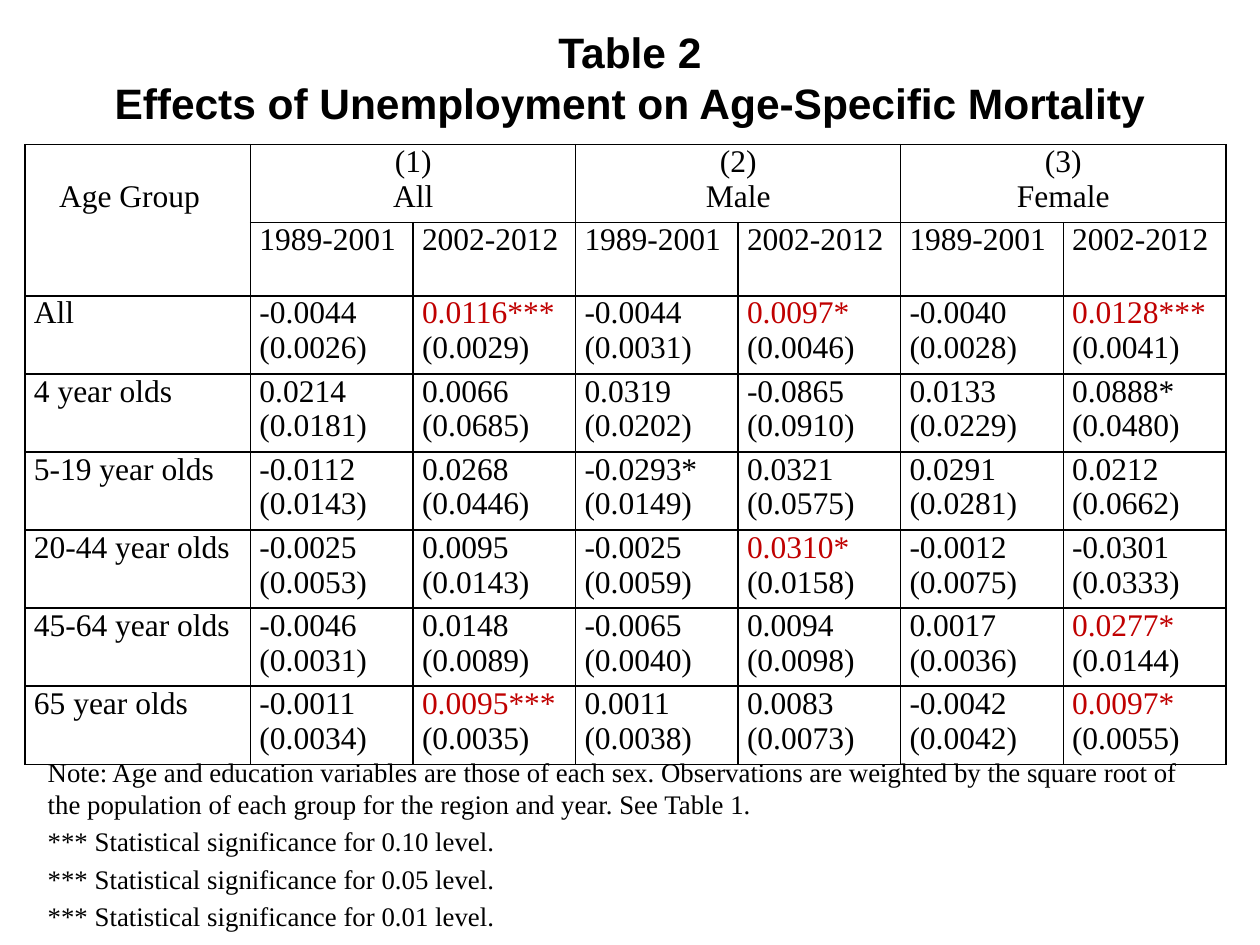
from dataclasses import dataclass

from lxml import etree
from pptx import Presentation
from pptx.dml.color import RGBColor
from pptx.enum.text import MSO_ANCHOR, PP_ALIGN
from pptx.oxml.ns import qn
from pptx.util import Inches, Pt

CENTER, LEFT, JUSTIFY = PP_ALIGN.CENTER, PP_ALIGN.LEFT, PP_ALIGN.JUSTIFY
TOP = MSO_ANCHOR.TOP
SLIDE_WIDTH, SLIDE_HEIGHT = 10, 7.5


@dataclass(frozen=True)
class Theme:
    ink: str = "000000"
    highlight: str = "C00000"
    title_font: str = "Arial"
    body_font: str = "Times New Roman"
    title_size: float = 24.3
    table_size: float = 18
    note_size: float = 15.3
    border_width: float = 1


@dataclass(frozen=True)
class Area:
    """A rectangle given as shares of the slide's width and height."""
    left: float
    top: float
    width: float
    height: float

    def lengths(self):
        return (Inches(self.left * SLIDE_WIDTH), Inches(self.top * SLIDE_HEIGHT),
                Inches(self.width * SLIDE_WIDTH), Inches(self.height * SLIDE_HEIGHT))


@dataclass(frozen=True)
class AgeRow:
    label: str
    estimates: str
    errors: str
    highlighted: tuple = ()


THEME = Theme()
TITLE_AREA = Area(0.051, 0.028, 0.898, 0.11)
NOTE_AREA = Area(0.028, 0.793, 0.929, 0.168)
TABLE_AREA = Area(0.02, 0.153, 0.953, 0.652)
LABEL_COLUMN, VALUE_COLUMN = 0.179, 0.129
ROW_HEIGHT, PERIOD_ROW_HEIGHT = 0.62, 0.55
CELL_MARGIN, TABLE_LINE = 0.07, 0.28

TITLE = ["Table 2", "Effects of Unemployment on Age-Specific Mortality"]
NOTES = ["Note: Age and education variables are those of each sex. Observations are weighted "
         "by the square root of the population of each group for the region and year. See Table 1."]
NOTES += [f"*** Statistical significance for {level} level." for level in ("0.10", "0.05", "0.01")]
GROUPS = ["All", "Male", "Female"]
PERIODS = ["1989-2001", "2002-2012"]
AGE_ROWS = [
    AgeRow("All", "-0.0044 0.0116*** -0.0044 0.0097* -0.0040 0.0128***",
           "0.0026 0.0029 0.0031 0.0046 0.0028 0.0041", (2, 4, 6)),
    AgeRow("4 year olds", "0.0214 0.0066 0.0319 -0.0865 0.0133 0.0888*",
           "0.0181 0.0685 0.0202 0.0910 0.0229 0.0480"),
    AgeRow("5-19 year olds", "-0.0112 0.0268 -0.0293* 0.0321 0.0291 0.0212",
           "0.0143 0.0446 0.0149 0.0575 0.0281 0.0662"),
    AgeRow("20-44 year olds", "-0.0025 0.0095 -0.0025 0.0310* -0.0012 -0.0301",
           "0.0053 0.0143 0.0059 0.0158 0.0075 0.0333", (4,)),
    AgeRow("45-64 year olds", "-0.0046 0.0148 -0.0065 0.0094 0.0017 0.0277*",
           "0.0031 0.0089 0.0040 0.0098 0.0036 0.0144", (6,)),
    AgeRow("65 year olds", "-0.0011 0.0095*** 0.0011 0.0083 -0.0042 0.0097*",
           "0.0034 0.0035 0.0038 0.0073 0.0042 0.0055", (2, 6)),
]


def write(frame, lines, *, size=THEME.table_size, font=THEME.body_font, bold=False,
          align=JUSTIFY, first_color=THEME.ink, line_spacing=None, space_before=0):
    """Write one paragraph per line; first_color applies to the first line only."""
    for index, line in enumerate(lines):
        paragraph = frame.paragraphs[0] if index == 0 else frame.add_paragraph()
        paragraph.alignment = align
        paragraph.space_before = Pt(space_before)
        if line_spacing:
            paragraph.line_spacing = Pt(line_spacing)
        run = paragraph.add_run()
        run.text = line
        run.font.name, run.font.size, run.font.bold = font, Pt(size), bold
        run.font.color.rgb = RGBColor.from_string(THEME.ink if index else first_color)


def add_text(slide, area: Area, lines, *, margins=(0.1, 0.05), **text_format):
    frame = slide.shapes.add_textbox(*area.lengths()).text_frame
    frame.word_wrap = True
    frame.vertical_anchor = TOP
    frame.margin_left = frame.margin_right = Inches(margins[0])
    frame.margin_top = frame.margin_bottom = Inches(margins[1])
    write(frame, lines, **text_format)


def style_cell(cell):
    """Clear the fill, set the margins and draw all four borders."""
    cell.fill.background()
    cell.vertical_anchor = TOP
    cell.margin_left = cell.margin_right = Inches(CELL_MARGIN)
    cell.margin_top = cell.margin_bottom = 0
    properties = cell._tc.get_or_add_tcPr()
    for index, side in enumerate(("lnL", "lnR", "lnT", "lnB")):
        border = etree.Element(qn(f"a:{side}"), w=str(Pt(THEME.border_width)))
        fill = etree.SubElement(border, qn("a:solidFill"))
        etree.SubElement(fill, qn("a:srgbClr"), val=THEME.ink)
        properties.insert(index, border)


def add_mortality_table(slide):
    column_count = 1 + len(GROUPS) * len(PERIODS)
    row_count = 2 + len(AGE_ROWS)
    table = slide.shapes.add_table(row_count, column_count, *TABLE_AREA.lengths()).table
    table.first_row = table.horz_banding = False
    for index, column in enumerate(table.columns):
        column.width = Inches(SLIDE_WIDTH * (VALUE_COLUMN if index else LABEL_COLUMN))
    for index, row in enumerate(table.rows):
        row.height = Inches(PERIOD_ROW_HEIGHT if index == 1 else ROW_HEIGHT)
    for cell in table.iter_cells():
        style_cell(cell)

    corner = table.cell(0, 0)
    corner.merge(table.cell(1, 0))
    corner.margin_left = Inches(CELL_MARGIN + 0.2)
    corner.margin_top = Inches(TABLE_LINE)
    write(corner.text_frame, ["Age Group"])
    for number, group in enumerate(GROUPS):
        first = 1 + number * len(PERIODS)
        heading = table.cell(0, first)
        heading.merge(table.cell(0, first + len(PERIODS) - 1))
        write(heading.text_frame, [f"({number + 1})", group], align=CENTER)
        for offset, period in enumerate(PERIODS):
            write(table.cell(1, first + offset).text_frame, [period])

    for row, age_row in enumerate(AGE_ROWS, start=2):
        write(table.cell(row, 0).text_frame, [age_row.label])
        pairs = zip(age_row.estimates.split(), age_row.errors.split())
        for column, (estimate, error) in enumerate(pairs, start=1):
            color = THEME.highlight if column in age_row.highlighted else THEME.ink
            write(table.cell(row, column).text_frame, [estimate, f"({error})"], first_color=color)


def main():
    presentation = Presentation()
    presentation.slide_width = Inches(SLIDE_WIDTH)
    presentation.slide_height = Inches(SLIDE_HEIGHT)
    slide = presentation.slides.add_slide(presentation.slide_layouts[6])
    add_text(slide, TITLE_AREA, TITLE, margins=(0, 0), size=THEME.title_size,
             font=THEME.title_font, bold=True, align=CENTER, line_spacing=29)
    add_text(slide, NOTE_AREA, NOTES, size=THEME.note_size, align=LEFT,
             line_spacing=18.3, space_before=3.1)
    add_mortality_table(slide)
    presentation.save("out.pptx")


if __name__ == "__main__":
    main()
